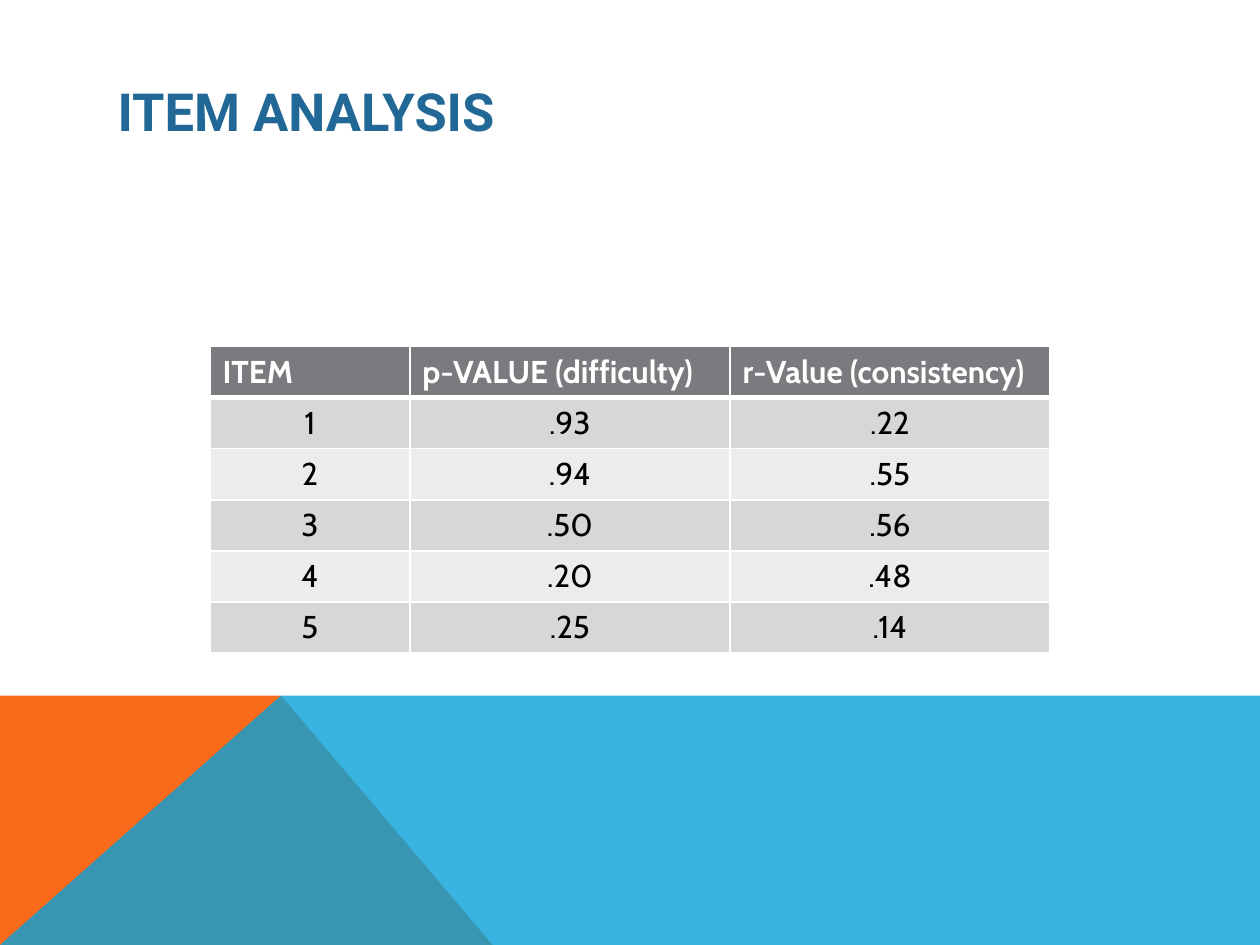
from pptx import Presentation
from pptx.dml.color import RGBColor
from pptx.enum.text import MSO_ANCHOR, PP_ALIGN
from pptx.oxml.ns import qn
from pptx.util import Inches, Pt
from lxml import etree

LEFT, CENTER = PP_ALIGN.LEFT, PP_ALIGN.CENTER
MIDDLE = MSO_ANCHOR.MIDDLE

THEME = {
    "title": ("Roboto", 30, "226897", True),
    "head": ("Cabin", 18, "FFFFFF", True),
    "cell": ("Cabin", 18, "000000", False),
    "head fill": "797B7E",
    "bands": ("D7D7D8", "ECECEC"),
    "rule": "FFFFFF",
    "orange": "F96A1B",
    "blue": "08A1D9",
}
ROWS = [
    ("ITEM", "p-VALUE (difficulty)", "r-Value (consistency)"),
    ("1", ".93", ".22"),
    ("2", ".94", ".55"),
    ("3", ".50", ".56"),
    ("4", ".20", ".48"),
    ("5", ".25", ".14"),
]


def write(frame, text, style, align):
    face, size, color, bold = THEME[style]
    par = frame.paragraphs[0]
    par.alignment = align
    run = par.add_run()
    run.text = text
    run.font.name, run.font.size, run.font.bold = face, Pt(size), bold
    run.font.color.rgb = RGBColor.from_string(color)


def border(cell, side, width):
    line = etree.SubElement(cell._tc.get_or_add_tcPr(), qn("a:ln" + side), w=str(Pt(width)))
    fill = etree.SubElement(line, qn("a:solidFill"))
    etree.SubElement(fill, qn("a:srgbClr"), val=THEME["rule"])


deck = Presentation()
deck.slide_width, deck.slide_height = Inches(10), Inches(7.5)
wide, high = deck.slide_width, deck.slide_height
slide = deck.slides.add_slide(deck.slide_layouts[5])

# Footer: an orange wedge under a translucent blue field
top, peak = Inches(5.52), Inches(2.23)
bands = [
    ("orange", [(0, high), (0, top), (peak, top), (Inches(3.91), high)]),
    ("blue", [(0, high), (peak, top), (wide, top), (wide, high)]),
]
for name, points in bands:
    pen = slide.shapes.build_freeform(*points[0])
    pen.add_line_segments(points[1:], close=True)
    shape = pen.convert_to_shape()
    shape.shadow.inherit = False
    shape.fill.solid()
    shape.fill.fore_color.rgb = RGBColor.from_string(THEME[name])
    shape.line.fill.background()
    if name == "blue":
        tint = shape._element.spPr.find(qn("a:solidFill"))[0]
        etree.SubElement(tint, qn("a:alpha"), val="80000")

# Title
title = slide.shapes.title
title.left, title.top = wide // 12, high // 30
title.width, title.height = Inches(9.5), high // 6
title.text_frame.vertical_anchor = MIDDLE
write(title.text_frame, "ITEM ANALYSIS", "title", LEFT)

# Table: two thirds of the slide wide, centred
span, row_high = wide * 2 // 3, Inches(0.405)
grid = slide.shapes.add_table(
    len(ROWS), len(ROWS[0]), wide // 6, Inches(2.75), span, row_high * len(ROWS)
).table
for col, share in zip(grid.columns, (0.238, 0.381, 0.381)):
    col.width = int(span * share)
for r, row in enumerate(ROWS):
    grid.rows[r].height = row_high
    head = r == 0
    for c, text in enumerate(row):
        cell = grid.cell(r, c)
        for side in "LRTB":
            thick = (head and side == "B") or (r == 1 and side == "T")
            border(cell, side, 3 if thick else 1)
        cell.fill.solid()
        shade = THEME["head fill"] if head else THEME["bands"][(r - 1) % 2]
        cell.fill.fore_color.rgb = RGBColor.from_string(shade)
        write(cell.text_frame, text, "head" if head else "cell", LEFT if head else CENTER)

deck.save("out.pptx")
